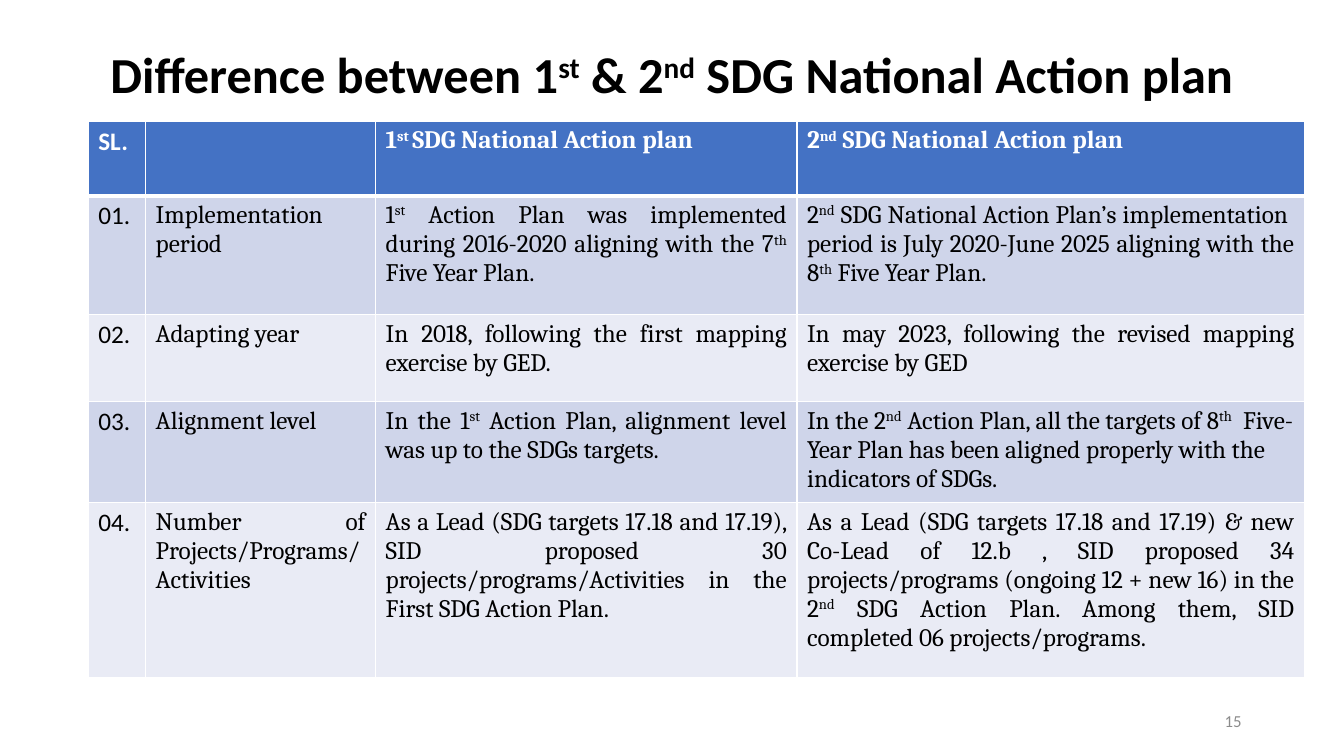
from dataclasses import dataclass

from lxml.etree import SubElement
from pptx import Presentation
from pptx.dml.color import RGBColor
from pptx.enum.text import MSO_ANCHOR, PP_ALIGN
from pptx.oxml.ns import qn
from pptx.util import Pt


@dataclass(frozen=True)
class Theme:
    heading_font: str = "Calibri"
    body_font: str = "Cambria"
    title_size: int = 36
    table_size: int = 18
    number_size: int = 12
    black: str = "000000"
    white: str = "FFFFFF"
    grey: str = "8C8C8C"
    header_fill: str = "4472C4"
    band_fills: tuple = ("CFD5EA", "E9EBF5")


THEME = Theme()
COLUMN_WIDTHS = (41, 164.3, 301, 362.5)
ROW_HEIGHTS = (53.3, 85, 62, 60.5, 125.3)
LEFT_ALIGNED_CELLS = {(3, 3)}

ROWS = (
    ("SL.", "", "1^st ^SDG National Action plan", "2^nd^ SDG National Action plan"),
    (
        "01.",
        "Implementation period",
        "1^st^ Action Plan was implemented during 2016-2020 aligning with the 7^th^ Five Year Plan.",
        "2^nd^ SDG National Action Plan’s implementation  period is July 2020-June 2025 "
        "aligning with the 8^th^ Five Year Plan.",
    ),
    (
        "02.",
        "Adapting year",
        "In 2018, following the first mapping exercise by GED. ",
        "In may 2023, following the revised mapping exercise by GED",
    ),
    (
        "03.",
        "Alignment level",
        "In the 1^st^ Action Plan, alignment level was up to the SDGs targets.",
        "In the 2^nd^ Action Plan, all the targets of 8^th^  Five-Year Plan has been "
        "aligned properly with the indicators of SDGs.",
    ),
    (
        "04.",
        "Number of Projects/Programs/Activities",
        "As a Lead (SDG targets 17.18 and 17.19), SID proposed 30 "
        "projects/programs/Activities in the First SDG Action Plan. ",
        "As a Lead (SDG targets 17.18 and 17.19) & new Co-Lead of 12.b , SID proposed 34 "
        "projects/programs (ongoing 12 + new 16) in the 2^nd^ SDG Action Plan. Among them, "
        "SID completed 06 projects/programs.",
    ),
)


def write_text(paragraph, text, font_name, size, color, bold=False, align=PP_ALIGN.LEFT):
    paragraph.alignment = align
    for index, part in enumerate(text.split("^")):
        run = paragraph.add_run()
        run.text = part
        run.font.name = font_name
        run.font.size = Pt(size)
        run.font.bold = bold
        run.font.color.rgb = RGBColor.from_string(color)
        if index % 2:
            run.font._element.set("baseline", "30000")


def add_label(slide, box, text, size, color, bold, align):
    shape = slide.shapes.add_textbox(*(Pt(length) for length in box))
    text_frame = shape.text_frame
    text_frame.word_wrap = True
    text_frame.vertical_anchor = MSO_ANCHOR.MIDDLE
    paragraph = text_frame.paragraphs[0]
    write_text(paragraph, text, THEME.heading_font, size, color, bold, align)
    return paragraph


def set_borders(cell, widths):
    properties = cell._tc.get_or_add_tcPr()
    for side, width in widths.items():
        line = SubElement(properties, qn(f"a:ln{side}"), w=str(Pt(width)))
        fill = SubElement(line, qn("a:solidFill"))
        SubElement(fill, qn("a:srgbClr"), val=THEME.white)


def fill_cell(cell, text, row, column):
    header = row == 0
    set_borders(cell, {"L": 1, "R": 1, "T": 3 if row == 1 else 1, "B": 3 if header else 1})
    cell.fill.solid()
    fill = THEME.header_fill if header else THEME.band_fills[(row - 1) % 2]
    cell.fill.fore_color.rgb = RGBColor.from_string(fill)
    justified = not header and column > 0 and (row, column) not in LEFT_ALIGNED_CELLS
    write_text(
        cell.text_frame.paragraphs[0],
        text,
        THEME.body_font if column else THEME.heading_font,
        THEME.table_size,
        THEME.white if header else THEME.black,
        header,
        PP_ALIGN.JUSTIFY if justified else PP_ALIGN.LEFT,
    )


def add_comparison_table(slide, left, top):
    table = slide.shapes.add_table(
        len(ROW_HEIGHTS), len(COLUMN_WIDTHS),
        Pt(left), Pt(top), Pt(sum(COLUMN_WIDTHS)), Pt(sum(ROW_HEIGHTS)),
    ).table
    for column, width in zip(table.columns, COLUMN_WIDTHS):
        column.width = Pt(width)
    for row, height in zip(table.rows, ROW_HEIGHTS):
        row.height = Pt(height)
    for row, texts in enumerate(ROWS):
        for column, text in enumerate(texts):
            fill_cell(table.cell(row, column), text, row, column)


def main():
    presentation = Presentation()
    presentation.slide_width = Pt(960)
    presentation.slide_height = Pt(540)
    slide = presentation.slides.add_slide(presentation.slide_layouts[6])
    title = add_label(
        slide, (66, 29, 828, 53), "Difference between 1^st^ & 2^nd^ SDG National Action plan",
        THEME.title_size, THEME.black, True, PP_ALIGN.CENTER,
    )
    title.line_spacing = 0.9
    add_comparison_table(slide, 63, 86.5)
    add_label(
        slide, (678, 500.5, 216, 28.75), "15",
        THEME.number_size, THEME.grey, False, PP_ALIGN.RIGHT,
    )
    presentation.save("out.pptx")


if __name__ == "__main__":
    main()
